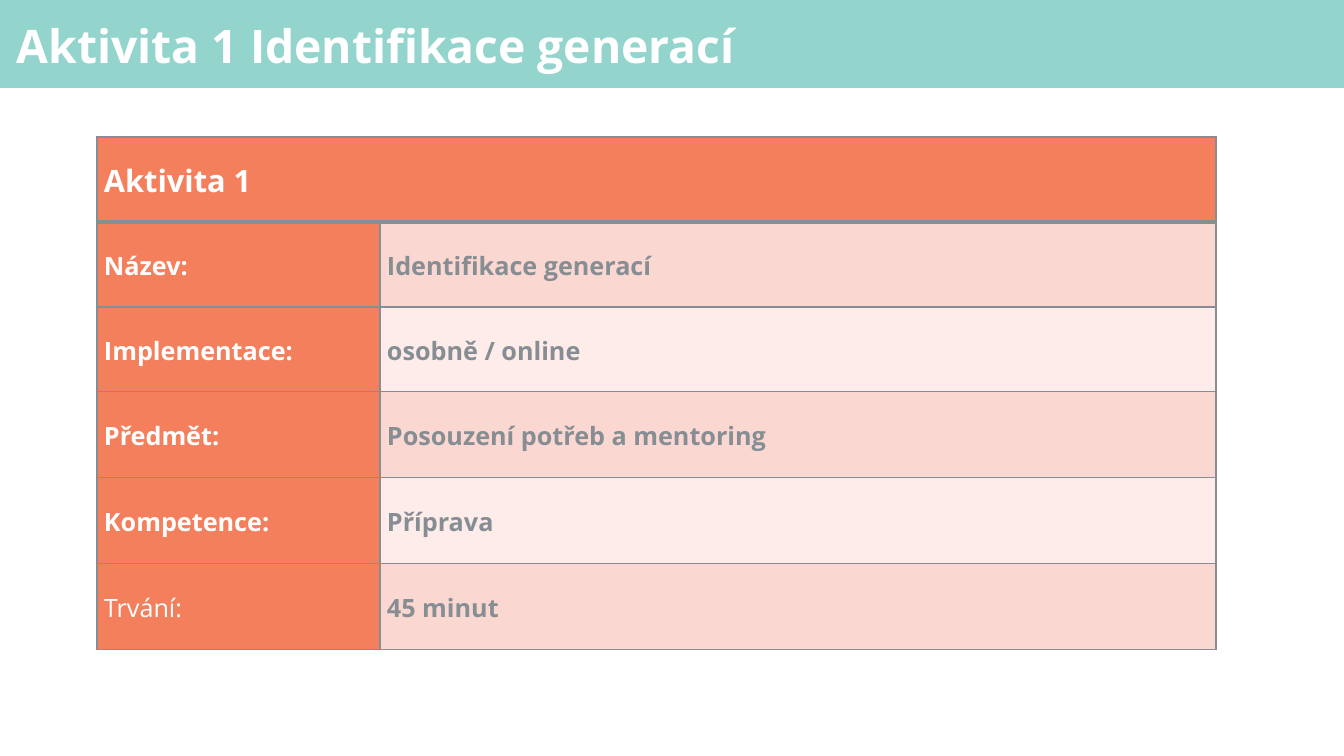
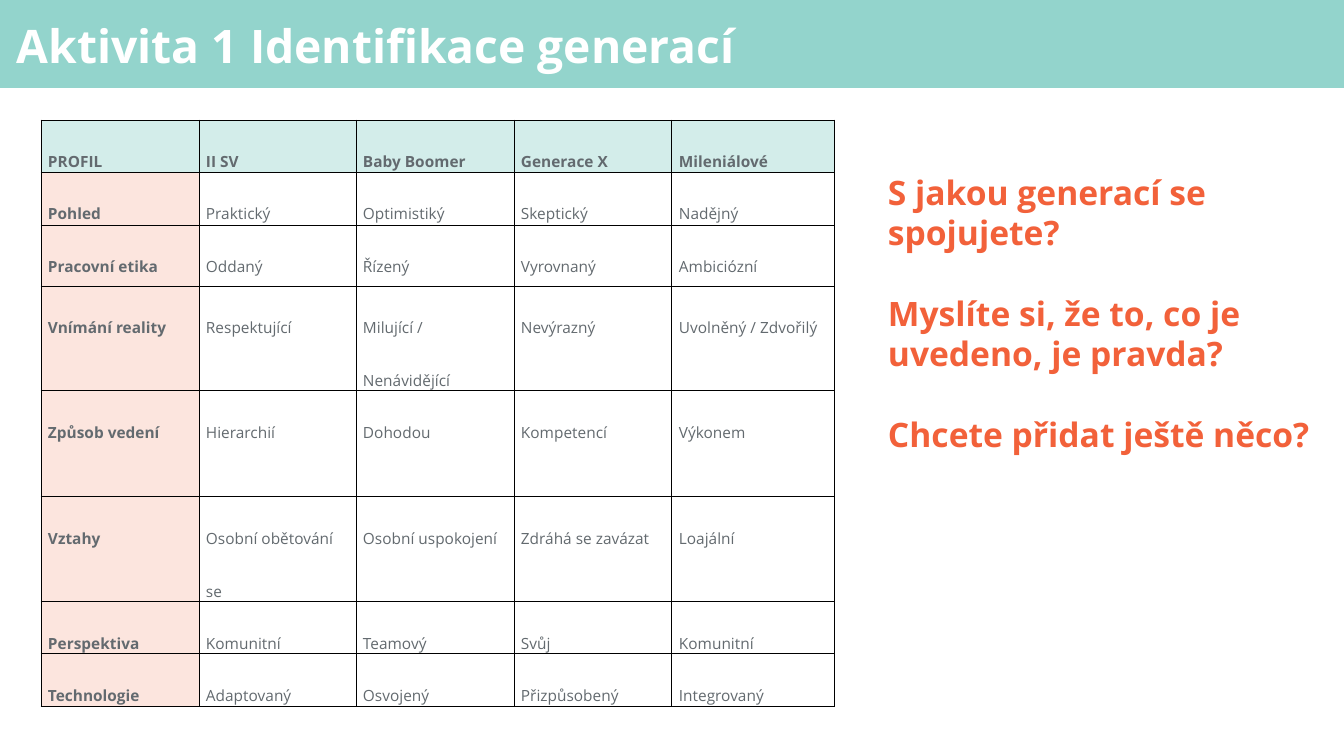
from lxml import etree
from pptx import Presentation
from pptx.dml.color import RGBColor
from pptx.enum.shapes import MSO_SHAPE
from pptx.enum.text import MSO_ANCHOR
from pptx.oxml.ns import qn
from pptx.util import Pt

RECTANGLE = MSO_SHAPE.RECTANGLE
TOP, MIDDLE = MSO_ANCHOR.TOP, MSO_ANCHOR.MIDDLE
PX = 914400 / 100.8
FONT = "Open Sans"
COLOURS = {
    "band": "93D4CC",
    "white": "FFFFFF",
    "orange": "F47F5D",
    "question": "F2613A",
    "grey": "868E93",
    "dark_grey": "636A6F",
    "black": "000000",
    "pink": "FBD7D1",
    "pale_pink": "FDECE9",
    "mint": "D3EDEA",
    "peach": "FCE5DE",
}
SLIDE_BOX = (0, 0, 1344, 756)
BAND_HEIGHT = 88
TITLE = "Aktivita 1 Identifikace generací"

SUMMARY = [
    ("Název:", "Identifikace generací"),
    ("Implementace:", "osobně / online"),
    ("Předmět:", "Posouzení potřeb a mentoring"),
    ("Kompetence:", "Příprava"),
    ("Trvání:", "45 minut"),
]
PROFILES = [
    ("PROFIL", "II SV", "Baby Boomer", "Generace X", "Mileniálové"),
    ("Pohled", "Praktický", "Optimistiký", "Skeptický", "Nadějný"),
    ("Pracovní etika", "Oddaný", "Řízený", "Vyrovnaný", "Ambiciózní"),
    ("Vnímání reality", "Respektující", "Milující / Nenávidějící", "Nevýrazný",
     "Uvolněný / Zdvořilý"),
    ("Způsob vedení", "Hierarchií", "Dohodou", "Kompetencí", "Výkonem"),
    ("Vztahy", "Osobní obětování se", "Osobní uspokojení", "Zdráhá se zavázat",
     "Loajální"),
    ("Perspektiva", "Komunitní", "Teamový", "Svůj", "Komunitní"),
    ("Technologie", "Adaptovaný", "Osvojený", "Přizpůsobený", "Integrovaný"),
]
QUESTIONS = [
    "S jakou generací se spojujete?",
    "Myslíte si, že to, co je uvedeno, je pravda?",
    "Chcete přidat ještě něco?",
]


def px(*lengths):
    """Turn pixel lengths into a list of EMU values."""
    return [round(length * PX) for length in lengths]


def apply(target, values):
    """Set every attribute named in a dict of format values."""
    for name, value in values.items():
        setattr(target, name, value)


def colour(name):
    """Look up a palette colour."""
    return RGBColor.from_string(COLOURS[name])


def margins(left, top, right, bottom):
    """Give the four insets of a text frame or cell as format values."""
    names = ("margin_left", "margin_top", "margin_right", "margin_bottom")
    return dict(zip(names, px(left, top, right, bottom)))


def write(paragraph, text, size, ink, bold, **spacing):
    """Put one formatted run into a paragraph."""
    run = paragraph.add_run()
    run.text = text
    apply(run.font, {"name": FONT, "size": Pt(size), "bold": bold})
    run.font.color.rgb = colour(ink)
    apply(paragraph, spacing)


def add_text(slide, box, insets, anchor):
    """Add a wrapping text box and return its text frame."""
    frame = slide.shapes.add_textbox(*px(*box)).text_frame
    apply(frame, {"word_wrap": True, "vertical_anchor": anchor, **margins(*insets)})
    return frame


def add_title_band(slide, box, text):
    """Draw the coloured band with the slide title."""
    left, top, width, height = box
    band = slide.shapes.add_shape(RECTANGLE, *px(*box))
    band.shadow.inherit = False
    band.fill.solid()
    band.fill.fore_color.rgb = colour("band")
    band.line.fill.background()
    title_box = (left + 11, top + 9, width - 28, height - 9)
    frame = add_text(slide, title_box, (6, 6, 6, 6), MIDDLE)
    write(frame.paragraphs[0], text, 33, "white", True, line_spacing=0.9)


def add_grid(slide, position, columns, rows):
    """Add a table with the given column widths and row heights."""
    shape = slide.shapes.add_table(len(rows), len(columns), *px(*position, sum(columns), sum(rows)))
    table = shape.table
    apply(table, {"first_row": False, "horz_banding": False})
    for column, width in zip(table.columns, px(*columns)):
        column.width = width
    for row, height in zip(table.rows, px(*rows)):
        row.height = height
    return table


def style_cell(cell, fill, anchor, border, widths):
    """Fill a cell and draw its left, right, top and bottom borders."""
    apply(cell, {"vertical_anchor": anchor, **margins(7, 0, 7, 0)})
    cell.fill.solid()
    cell.fill.fore_color.rgb = colour(fill)
    properties = cell._tc.get_or_add_tcPr()
    for index, (side, width) in enumerate(zip("LRTB", widths)):
        line = etree.Element(qn(f"a:ln{side}"), w=str(Pt(width)))
        solid = etree.SubElement(line, qn("a:solidFill"))
        etree.SubElement(solid, qn("a:srgbClr"), val=COLOURS[border])
        properties.insert(index, line)


def add_summary(slide, position):
    """Draw the activity summary under a merged heading row."""
    table = add_grid(slide, position, [283, 836], [85, 85, 85, 86, 86, 86])
    heading = table.cell(0, 0)
    heading.merge(table.cell(0, 1))
    for cell in table.rows[0].cells:
        style_cell(cell, "orange", MIDDLE, "grey", (1, 1, 1, 3))
    write(heading.text_frame.paragraphs[0], "Aktivita 1", 22, "white", True, line_spacing=1.07)
    for row, (label, value) in enumerate(SUMMARY, 1):
        value_fill = "pink" if row % 2 else "pale_pink"
        label_bold = row < len(SUMMARY)
        widths = (1, 1, 3 if row == 1 else 1, 1)
        formats = [(label, "orange", "white", label_bold), (value, value_fill, "grey", True)]
        for column, (text, fill, ink, bold) in enumerate(formats):
            cell = table.cell(row, column)
            style_cell(cell, fill, MIDDLE, "grey", widths)
            write(cell.text_frame.paragraphs[0], text, 18, ink, bold, line_spacing=1.07)


def add_profiles(slide, position):
    """Draw the comparison of generations."""
    table = add_grid(slide, position, [158, 157, 158, 158, 163],
                     [52, 53, 61, 105, 106, 105, 52, 53])
    for row, texts in enumerate(PROFILES):
        for column, text in enumerate(texts):
            fill = "mint" if row == 0 else "peach" if column == 0 else "white"
            cell = table.cell(row, column)
            style_cell(cell, fill, TOP, "black", (0.75,) * 4)
            write(cell.text_frame.paragraphs[0], text, 11, "dark_grey", fill != "white",
                  line_spacing=2.5)


def add_questions(slide, box):
    """Write the discussion questions, one line apart."""
    frame = add_text(slide, box, (10, 9, 10, 5), TOP)
    for index, question in enumerate(QUESTIONS):
        paragraph = frame.add_paragraph() if index else frame.paragraphs[0]
        space = Pt(28.8) if index else Pt(0)
        write(paragraph, question, 24, "question", True, line_spacing=Pt(28.8), space_before=space)


def add_slide(presentation):
    """Add a blank slide with the shared title band."""
    slide = presentation.slides.add_slide(presentation.slide_layouts[6])
    left, top, width, _ = SLIDE_BOX
    add_title_band(slide, (left, top, width, BAND_HEIGHT), TITLE)
    return slide


def main():
    """Build and save the presentation."""
    presentation = Presentation()
    width, height = px(*SLIDE_BOX[2:])
    apply(presentation, {"slide_width": width, "slide_height": height})
    add_summary(add_slide(presentation), (97, 137))
    comparison = add_slide(presentation)
    add_questions(comparison, (878, 163, 458, 295))
    add_profiles(comparison, (41, 120))
    presentation.save("out.pptx")


if __name__ == "__main__":
    main()
